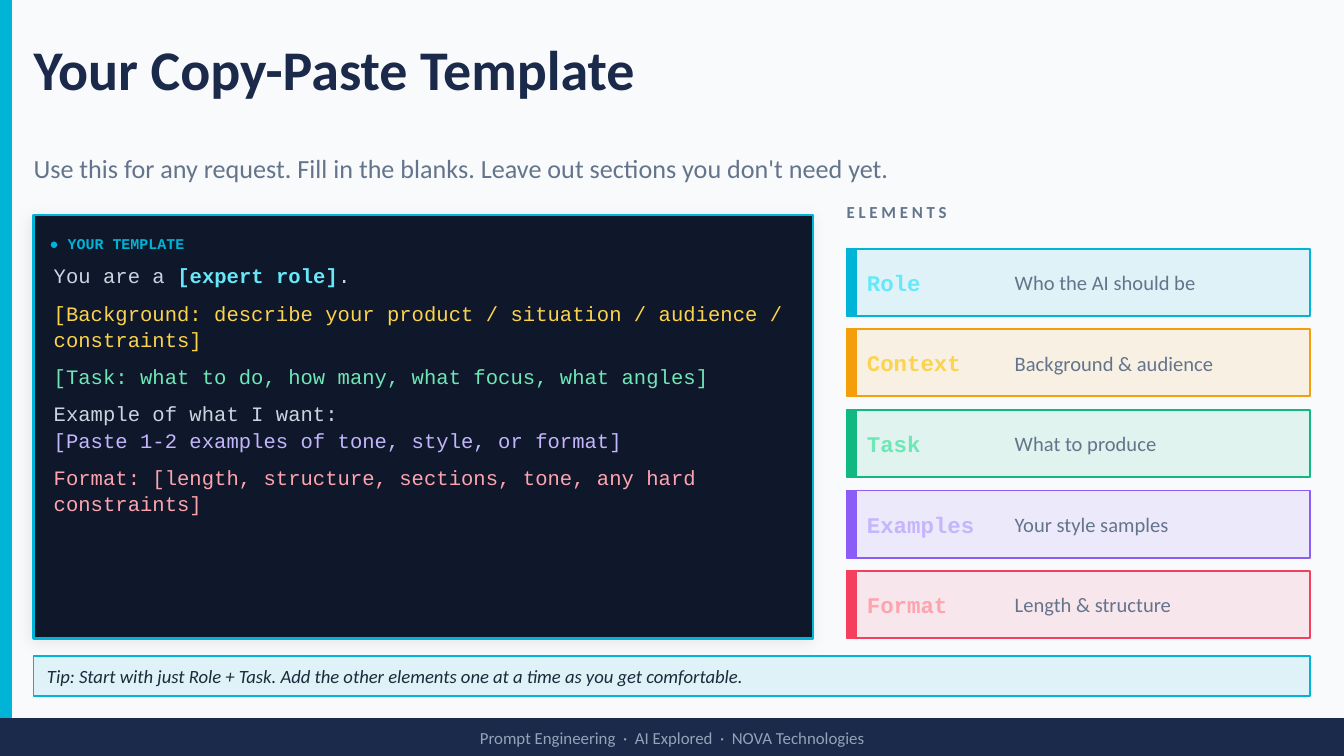
"""Build a slide with a fill-in prompt template and its five elements."""
from lxml import etree
from pptx import Presentation
from pptx import util as u
from pptx.dml import color
from pptx.enum import shapes, text
from pptx.oxml import ns

theme = {
    "background": "F8FAFC", "navy": "1B2A4A", "ink": "1E293B", "code": "0F172A",
    "muted": "64748B", "plain": "CBD5E1", "footer": "94A3B8",
    "cyan": "00B4D8", "amber": "F59E0B", "green": "10B981", "violet": "8B5CF6", "rose": "F43F5E",
    "light cyan": "67E8F9", "light amber": "FCD34D", "light green": "6EE7B7",
    "light violet": "C4B5FD", "light rose": "FDA4AF",
    "title": {"name": "Calibri", "size": u.Pt(30), "bold": True},
    "subtitle": {"name": "Calibri", "size": u.Pt(14)},
    "heading": {"name": "Calibri", "size": u.Pt(9), "bold": True},
    "body": {"name": "Calibri", "size": u.Pt(11)},
    "tip": {"name": "Calibri", "size": u.Pt(10), "italic": True},
    "small": {"name": "Calibri", "size": u.Pt(9)},
    "code label": {"name": "Courier New", "size": u.Pt(8), "bold": True},
    "code text": {"name": "Courier New", "size": u.Pt(11)},
    "code strong": {"name": "Courier New", "size": u.Pt(11), "bold": True},
    "element": {"name": "Courier New", "size": u.Pt(12), "bold": True},
}

presentation = Presentation()
presentation.slide_width, presentation.slide_height = u.Pt(720), u.Pt(405)
slide = presentation.slides.add_slide(presentation.slide_layouts[6])
slide.background.fill.solid()
slide.background.fill.fore_color.rgb = color.RGBColor.from_string(theme["background"])


def add_box(left, top, width, height, fill, line=None, line_width=1, opacity=100):
    shape = slide.shapes.add_shape(shapes.MSO_SHAPE.RECTANGLE, *map(u.Pt, (left, top, width, height)))
    shape.shadow.inherit = False
    shape.fill.solid()
    shape.fill.fore_color.rgb = color.RGBColor.from_string(theme[fill])
    shape.line.color.rgb = color.RGBColor.from_string(theme[line or fill])
    shape.line.width = u.Pt(line_width)
    if opacity < 100:
        tint = shape.fill._xPr.find(ns.qn("a:solidFill"))[0]
        etree.SubElement(tint, ns.qn("a:alpha"), val=str(opacity * 1000))
    return shape


def add_text(left, top, width, height, paragraphs, anchor=text.MSO_ANCHOR.MIDDLE):
    frame = slide.shapes.add_textbox(*map(u.Pt, (left, top, width, height))).text_frame
    settings = {"word_wrap": True, "vertical_anchor": anchor, "margin_left": 0,
                "margin_right": 0, "margin_top": 0, "margin_bottom": 0}
    for name, value in settings.items():
        setattr(frame, name, value)
    for index, runs in enumerate(paragraphs):
        paragraph = frame.paragraphs[0] if index == 0 else frame.add_paragraph()
        for words, style, tone in runs:
            run = paragraph.add_run()
            run.text = words
            for name, value in theme[style].items():
                setattr(run.font, name, value)
            run.font.color.rgb = color.RGBColor.from_string(theme[tone])
    return frame


add_box(0, 0, 5.76, 385.2, "cyan")
add_text(18, 8.64, 684, 56.16, [[("Your Copy-Paste Template", "title", "navy")]])
add_text(18, 75.6, 684, 28.8, [[(
    "Use this for any request. Fill in the blanks. Leave out sections you don't need yet.",
    "subtitle", "muted")]])

panel = add_box(18, 115.2, 417.6, 226.8, "code", "cyan", 1.5)
effects = panel._element.spPr.find(ns.qn("a:effectLst"))
shadow = etree.SubElement(effects, ns.qn("a:outerShdw"), blurRad=str(u.Pt(8)),
                          dist=str(u.Pt(2)), dir=str(135 * 60000))
shadow_color = etree.SubElement(shadow, ns.qn("a:srgbClr"), val="000000")
etree.SubElement(shadow_color, ns.qn("a:alpha"), val="8000")
add_text(26.64, 122.4, 216, 15.84, [[("● YOUR TEMPLATE", "code label", "cyan")]])

template = add_text(28.8, 140.4, 396, 194.4, [
    [("You are a ", "code text", "plain"), ("[expert role]", "code strong", "light cyan"),
     (".", "code text", "plain")],
    [("[Background: describe your product / situation / audience / constraints]",
      "code text", "light amber")],
    [("[Task: what to do, how many, what focus, what angles]", "code text", "light green")],
    [("Example of what I want:", "code text", "plain")],
    [("[Paste 1-2 examples of tone, style, or format]", "code text", "light violet")],
    [("Format: [length, structure, sections, tone, any hard constraints]",
      "code text", "light rose")],
], text.MSO_ANCHOR.TOP)
for paragraph, gap in zip(template.paragraphs, (0, 6, 6, 6, 0, 6)):
    paragraph.line_spacing = 1.06
    paragraph.space_before = u.Pt(gap)

heading = add_text(453.6, 100.8, 244.8, 25.2, [[("ELEMENTS", "heading", "muted")]])
heading.paragraphs[0].runs[0].font._element.set("spc", "200")

elements = [
    ("Role", "Who the AI should be", "cyan"),
    ("Context", "Background & audience", "amber"),
    ("Task", "What to produce", "green"),
    ("Examples", "Your style samples", "violet"),
    ("Format", "Length & structure", "rose"),
]
for row, (element, description, accent) in enumerate(elements):
    top = 133.2 + row * 43.2
    add_box(453.6, top, 248.4, 36, accent, opacity=10)
    add_box(453.6, top, 5.04, 36, accent)
    add_text(464.4, top, 79.2, 36, [[(element, "element", f"light {accent}")]])
    add_text(543.6, top, 154.8, 36, [[(description, "body", "muted")]])

add_box(18, 351.36, 684, 21.6, "cyan", opacity=10)
add_text(25.2, 351.36, 669.6, 21.6, [[(
    "Tip: Start with just Role + Task. Add the other elements one at a time as you get comfortable.",
    "tip", "ink")]])

add_box(0, 385.2, 720, 19.8, "navy")
footer = add_text(0, 385.2, 720, 19.8, [[(
    "Prompt Engineering  ·  AI Explored  ·  NOVA Technologies", "small", "footer")]])
footer.paragraphs[0].alignment = text.PP_ALIGN.CENTER

presentation.save("out.pptx")
